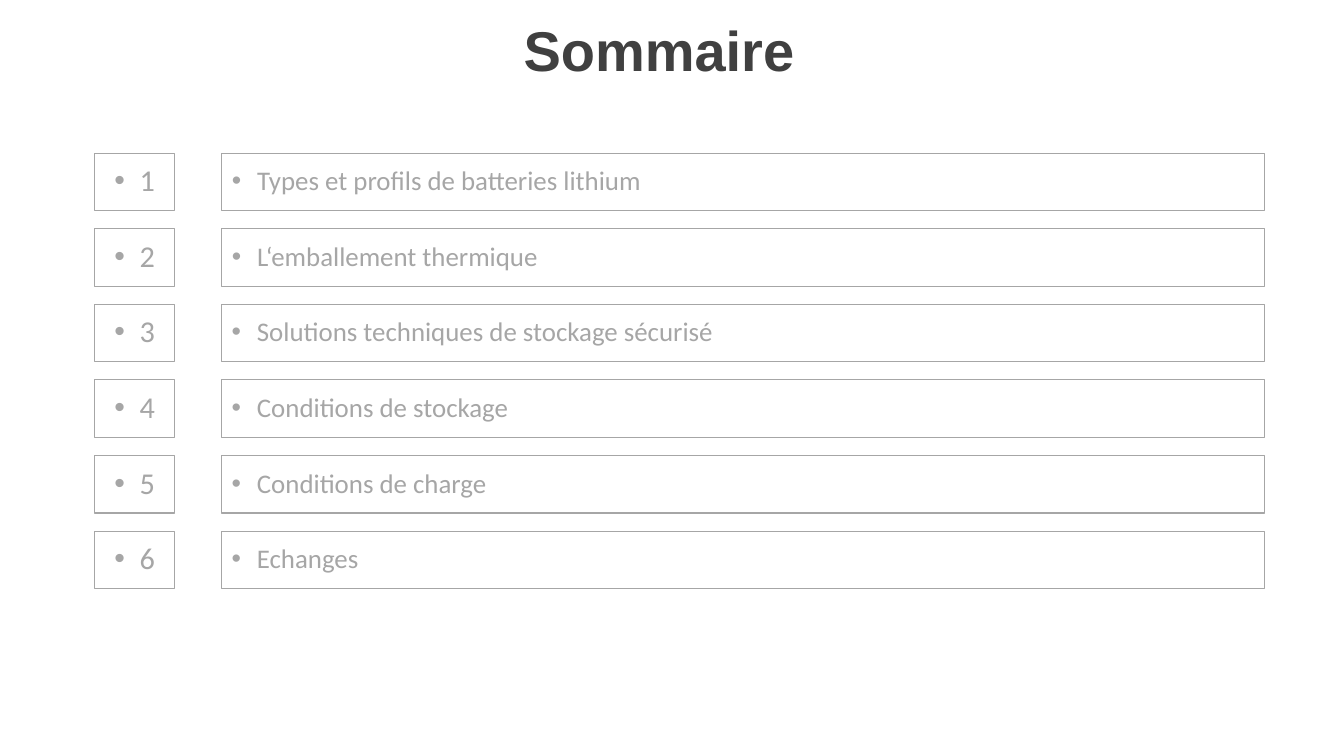
from dataclasses import dataclass

from lxml.etree import SubElement
from pptx import Presentation
from pptx.dml.color import RGBColor
from pptx.enum.shapes import MSO_SHAPE
from pptx.enum.text import MSO_ANCHOR, MSO_AUTO_SIZE, PP_ALIGN
from pptx.oxml.ns import qn
from pptx.util import Inches, Pt


@dataclass(frozen=True)
class Theme:
    """Colours, fonts and type sizes of the deck."""
    dark: RGBColor = RGBColor(0x40, 0x40, 0x40)
    grey: RGBColor = RGBColor(0xA6, 0xA6, 0xA6)
    head: str = "Arial"
    body: str = "Calibri"
    title: float = 40
    number: float = 21.6
    topic: float = 19.2


THEME = Theme()
TOPICS = [
    "Types et profils de batteries lithium",
    "L‘emballement thermique",
    "Solutions techniques de stockage sécurisé",
    "Conditions de stockage",
    "Conditions de charge",
    "Echanges",
]


def place(shape, left, top, width, height):
    """Move a shape to a box given in inches."""
    shape.left, shape.top = Inches(left), Inches(top)
    shape.width, shape.height = Inches(width), Inches(height)


def write(shape, text, font, size, color, align, bold=False):
    """Write one centred line of text and return its paragraph."""
    frame = shape.text_frame
    frame.word_wrap = True
    frame.auto_size = MSO_AUTO_SIZE.NONE
    frame.vertical_anchor = MSO_ANCHOR.MIDDLE
    line = frame.paragraphs[0]
    line.alignment = align
    line.line_spacing = 0.9
    line.space_before = Pt(0)
    run = line.add_run()
    run.text = text
    run.font.name = font
    run.font.size = Pt(size)
    run.font.bold = bold
    run.font.color.rgb = color
    return line


def bullet(line):
    """Give a paragraph a hanging round bullet."""
    props = line._p.get_or_add_pPr()
    props.set("marL", str(Inches(0.25)))
    props.set("indent", str(-Inches(0.25)))
    SubElement(props, qn("a:buFont")).set("typeface", "Arial")
    SubElement(props, qn("a:buChar")).set("char", "•")


def heading(shape, text, left, top, width, height):
    """Fill the title placeholder."""
    place(shape, left, top, width, height)
    write(shape, text, THEME.head, THEME.title, THEME.dark, PP_ALIGN.CENTER, True)
    frame = shape.text_frame
    frame.margin_left = frame.margin_right = frame.margin_bottom = 0
    frame.margin_top = Inches(0.05)


def cell(shape, text, size, align, *box):
    """Turn a shape into an outlined box with one bulleted line."""
    place(shape, *box)
    shape.shadow.inherit = False
    shape.fill.background()
    shape.line.color.rgb = THEME.grey
    shape.line.width = Pt(0.75)
    bullet(write(shape, text, THEME.body, size, THEME.grey, align))


def agenda(slide, topics, left, top, width, pitch):
    """Stack numbered rows, using the body placeholders first."""
    spare = iter([p for p in slide.placeholders if p != slide.shapes.title])
    tall, narrow, shift = 0.57, 0.79, 1.26
    for row, topic in enumerate(topics):
        parts = [
            (str(row + 1), THEME.number, PP_ALIGN.CENTER, left, narrow),
            (topic, THEME.topic, PP_ALIGN.LEFT, left + shift, width - shift),
        ]
        for text, size, align, x, wide in parts:
            shape = next(spare, None) or slide.shapes.add_shape(
                MSO_SHAPE.RECTANGLE, 0, 0, 0, 0)
            cell(shape, text, size, align, x, top + row * pitch, wide, tall)


def main():
    """Build and save the summary slide."""
    deck = Presentation()
    deck.slide_width, deck.slide_height = Inches(13.33), Inches(7.5)
    slide = deck.slides.add_slide(deck.slide_layouts.get_by_name("Comparison"))
    heading(slide.shapes.title, "Sommaire", 0.42, 0.35, 12.23, 0.31)
    agenda(slide, TOPICS, 0.94, 1.52, 11.6, 0.75)
    deck.save("out.pptx")


if __name__ == "__main__":
    main()
